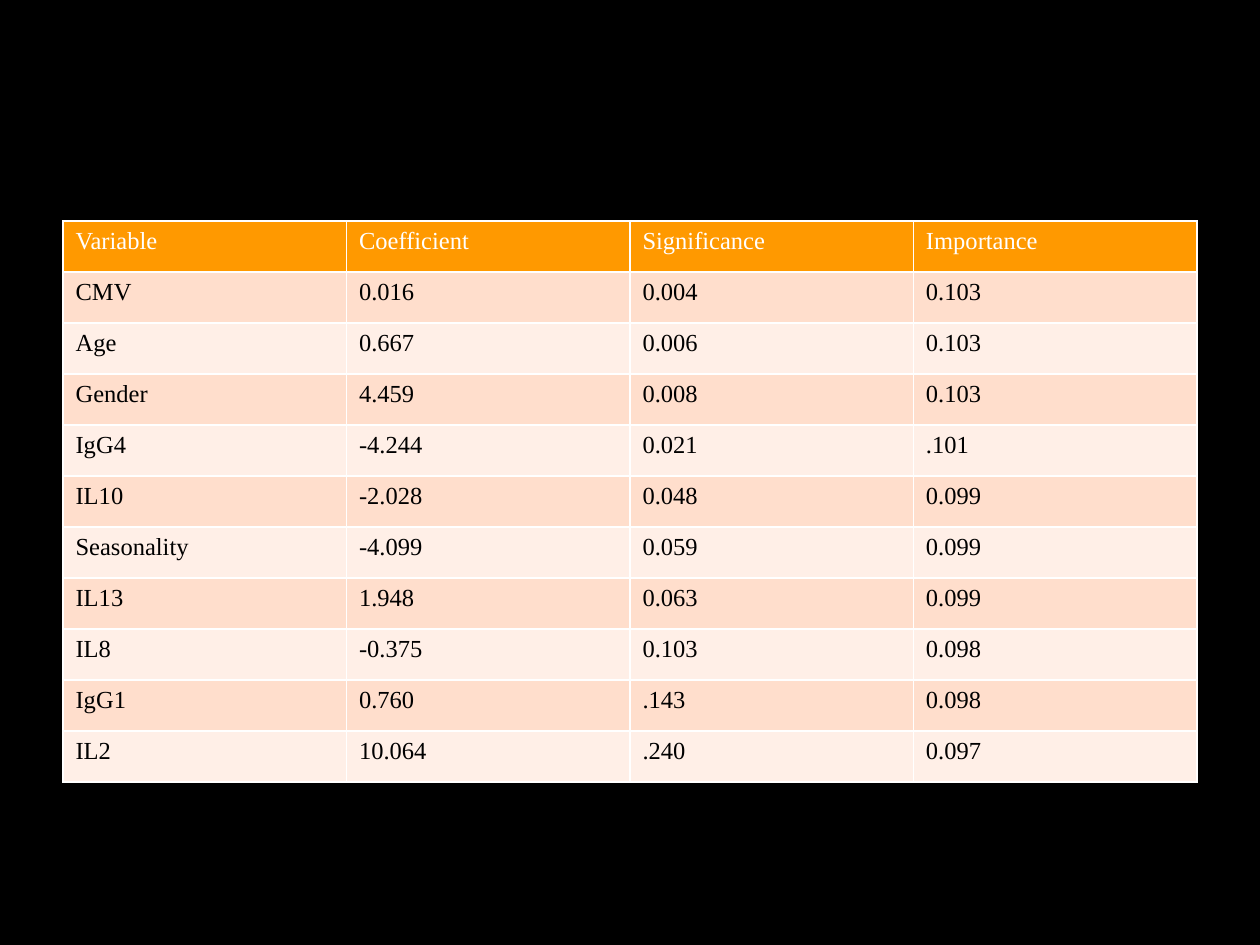
"""Build a slide with a table of predictor variables on a black ground."""
import pptx
import pptx.dml.color
import pptx.util

HEAD = ("Variable", "Coefficient", "Significance", "Importance")
ROWS = [
    ("CMV", "0.016", "0.004", "0.103"),
    ("Age", "0.667", "0.006", "0.103"),
    ("Gender", "4.459", "0.008", "0.103"),
    ("IgG4", "-4.244", "0.021", ".101"),
    ("IL10", "-2.028", "0.048", "0.099"),
    ("Seasonality", "-4.099", "0.059", "0.099"),
    ("IL13", "1.948", "0.063", "0.099"),
    ("IL8", "-0.375", "0.103", "0.098"),
    ("IgG1", "0.760", ".143", "0.098"),
    ("IL2", "10.064", ".240", "0.097"),
]
THEME = {
    "font": "Times New Roman",
    "size": 14,
    "back": "000000",
    "head": ("FF9900", "FFFFFF"),
    "bands": (("FFDECC", "000000"), ("FFEFE7", "000000")),
}
SCALE = 914400 // 126
WIDE, HIGH = 1260, 945
LEFT, TOP, ROW = 63, 221, 51


def px(count):
    """Turn px into EMU."""
    return pptx.util.Emu(count * SCALE)


def paint(fill, code):
    """Give a fill one solid colour."""
    fill.solid()
    fill.fore_color.rgb = pptx.dml.color.RGBColor.from_string(code)


def write(cell, text, fill, ink):
    """Fill a cell and set its text."""
    paint(cell.fill, fill)
    run = cell.text_frame.paragraphs[0].add_run()
    run.text = text
    run.font.name = THEME["font"]
    run.font.size = pptx.util.Pt(THEME["size"])
    run.font.bold = False
    run.font.color.rgb = pptx.dml.color.RGBColor.from_string(ink)


def main():
    """Build and save the deck."""
    deck = pptx.Presentation()
    deck.slide_width, deck.slide_height = px(WIDE), px(HIGH)
    slide = deck.slides.add_slide(deck.slide_layouts[6])
    paint(slide.background.fill, THEME["back"])

    data = [HEAD, *ROWS]
    frame = slide.shapes.add_table(
        len(data), len(HEAD), px(LEFT), px(TOP),
        px(WIDE - 2 * LEFT), px(ROW * len(data)))
    for r, line in enumerate(data):
        tones = THEME["bands"][(r - 1) % 2] if r else THEME["head"]
        for c, text in enumerate(line):
            write(frame.table.cell(r, c), text, *tones)
    deck.save("out.pptx")


if __name__ == "__main__":
    main()
